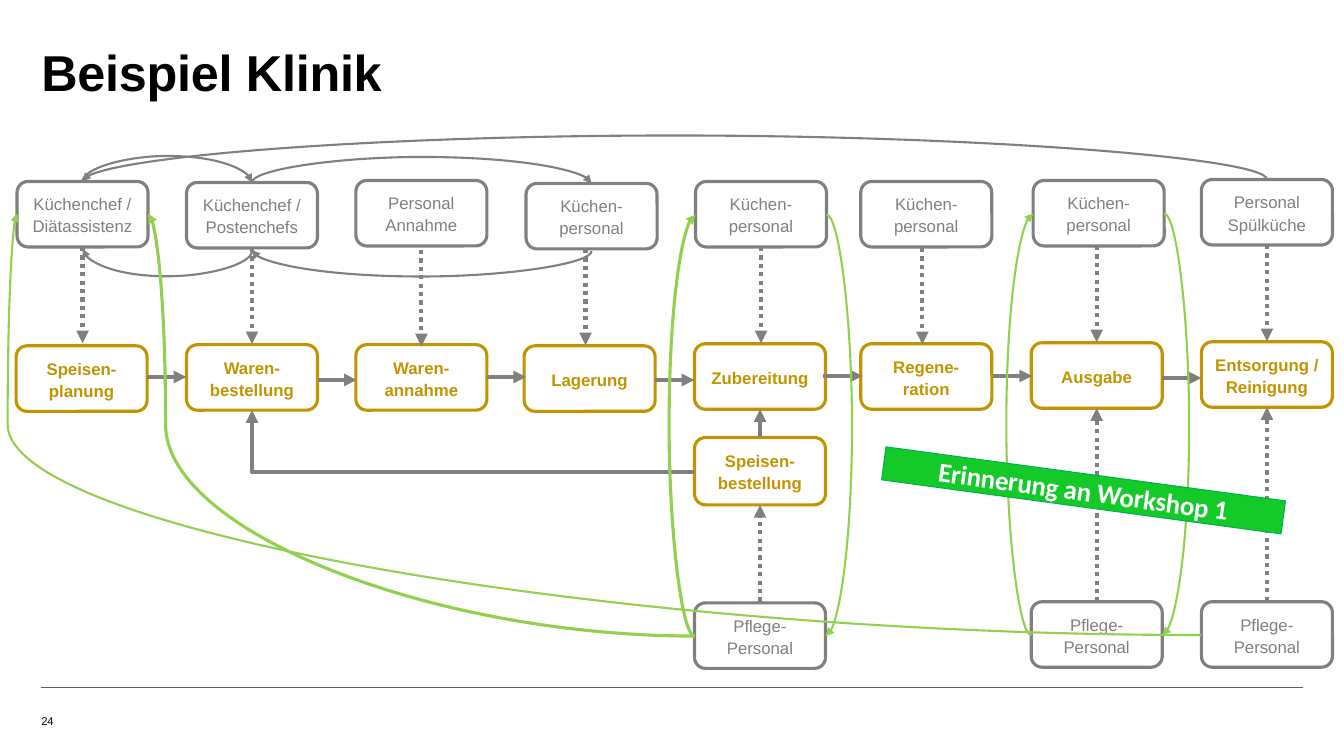
from lxml.etree import SubElement
from pptx import Presentation
from pptx.dml.color import RGBColor
from pptx.enum.dml import MSO_LINE
from pptx.enum.shapes import MSO_CONNECTOR, MSO_SHAPE
from pptx.enum.text import MSO_ANCHOR, MSO_AUTO_SIZE, PP_ALIGN
from pptx.oxml.ns import qn
from pptx.util import Pt

BLACK = RGBColor(0x00, 0x00, 0x00)
WHITE = RGBColor(0xFF, 0xFF, 0xFF)
GRAY = RGBColor(0x80, 0x80, 0x80)
RULE_GRAY = RGBColor(0x5E, 0x5E, 0x5E)
GOLD = RGBColor(0xC2, 0x94, 0x01)
LIME = RGBColor(0x92, 0xD0, 0x50)
BANNER_GREEN = RGBColor(0x13, 0xCA, 0x29)
BANNER_EDGE = RGBColor(0x00, 0xAF, 0x50)


def add_run(paragraph, text, size, color, bold=False, font="Arial", spacing=0):
    run = paragraph.add_run()
    run.text = text
    run.font.name = font
    run.font.size = Pt(size)
    run.font.bold = bold
    run.font.color.rgb = color
    if spacing:
        run._r.get_or_add_rPr().set("spc", str(spacing))


def style_line(connector, color, width, arrow=True, dotted=False):
    connector.line.color.rgb = color
    connector.line.width = Pt(width)
    if dotted:
        connector.line.dash_style = MSO_LINE.ROUND_DOT
    if arrow:
        SubElement(connector.get_or_add_ln(), qn("a:tailEnd"), type="triangle")
    SubElement(connector.element.spPr, qn("a:effectLst"))


presentation = Presentation()
presentation.slide_width = Pt(960)
presentation.slide_height = Pt(540)
slide = presentation.slides.add_slide(presentation.slide_layouts[5])
shapes = slide.shapes

footer_rule = shapes.add_connector(MSO_CONNECTOR.STRAIGHT, Pt(29.5), Pt(491), Pt(931), Pt(491))
style_line(footer_rule, RULE_GRAY, 0.5, arrow=False)

title = shapes.title
title.left, title.top, title.width, title.height = Pt(29.5), Pt(29.5), Pt(694.8), Pt(91.4)
page_number = shapes.add_textbox(Pt(29.5), Pt(496.8), Pt(113), Pt(23))
for shape, anchor in ((title, MSO_ANCHOR.TOP), (page_number, MSO_ANCHOR.BOTTOM)):
    frame = shape.text_frame
    frame.word_wrap = True
    frame.auto_size = MSO_AUTO_SIZE.NONE
    frame.vertical_anchor = anchor
    frame.margin_left = frame.margin_top = frame.margin_right = frame.margin_bottom = 0
    frame.paragraphs[0].alignment = PP_ALIGN.LEFT
title.text_frame.paragraphs[0].space_after = Pt(6)
add_run(title.text_frame.paragraphs[0], "Beispiel Klinik", 36, BLACK, True, spacing=-20)
add_run(page_number.text_frame.paragraphs[0], "24", 8, BLACK)

BOX_WIDTH, BOX_HEIGHT = 93.6, 46.8
process_boxes = [
    ("Speisen-planung", 11.5, 247, BOX_HEIGHT),
    ("Waren-bestellung", 133.2, 246.2, BOX_HEIGHT),
    ("Waren-annahme", 254.2, 246.2, BOX_HEIGHT),
    ("Lagerung", 374.4, 247, BOX_HEIGHT),
    ("Zubereitung", 496.1, 245.5, BOX_HEIGHT),
    ("Regene-ration", 614.9, 245.5, BOX_HEIGHT),
    ("Ausgabe", 736.6, 244.8, BOX_HEIGHT),
    ("Entsorgung / Reinigung", 858.2, 244.1, BOX_HEIGHT),
    ("Speisen-bestellung", 496.1, 312.5, 48.2),
]
staff_boxes = [
    ("Küchenchef /\nDiätassistenz", 12.2, 129.6, BOX_HEIGHT),
    ("Küchenchef / Postenchefs", 133.2, 130.3, BOX_HEIGHT),
    ("Personal Annahme", 254.2, 128.9, BOX_HEIGHT),
    ("Küchen-personal", 375.8, 131, BOX_HEIGHT),
    ("Küchen-personal", 496.8, 129.6, BOX_HEIGHT),
    ("Küchen-personal", 614.9, 129.6, BOX_HEIGHT),
    ("Küchen-personal", 738, 128.9, BOX_HEIGHT),
    ("Personal Spülküche", 858.2, 128.2, BOX_HEIGHT),
    ("Pflege-Personal", 496.1, 430.6, BOX_HEIGHT),
    ("Pflege-Personal", 736.6, 429.8, BOX_HEIGHT),
    ("Pflege-Personal", 858.2, 429.8, BOX_HEIGHT),
]
for boxes, color, bold in ((process_boxes, GOLD, True), (staff_boxes, GRAY, False)):
    for text, left, top, height in boxes:
        box = shapes.add_shape(MSO_SHAPE.ROUNDED_RECTANGLE, Pt(left), Pt(top), Pt(BOX_WIDTH), Pt(height))
        box.shadow.inherit = False
        box.fill.solid()
        box.fill.fore_color.rgb = WHITE
        box.line.color.rgb = color
        box.line.width = Pt(2.25)
        box.text_frame.word_wrap = True
        box.text_frame.vertical_anchor = MSO_ANCHOR.MIDDLE
        paragraph = box.text_frame.paragraphs[0]
        paragraph.alignment = PP_ALIGN.CENTER
        paragraph.line_spacing = 1.1
        for index, line in enumerate(text.split("\n")):
            if index:
                paragraph.add_line_break()
            add_run(paragraph, line, 12, color, bold)

process_arrows = [(105.1, 269.3), (226.8, 271.4), (347.8, 269.3), (468, 271.4),
                  (588.2, 268.6), (709.2, 268.6), (830.2, 270)]
staff_arrows = [(59, 176.4), (180, 177.1), (301, 178.6), (418.3, 177.8),
                (543.6, 176.4), (658.8, 177.1), (783.4, 175.7), (905, 175)]
arrows = [(x, y, x + 28, y, False) for x, y in process_arrows]
arrows += [(x, y, x, y + 68.8, True) for x, y in staff_arrows]
arrows += [
    (542.9, 312.5, 542.9, 292.3, False),
    (542.9, 429.8, 542.9, 360.7, True),
    (783.4, 429.8, 783.4, 291.6, True),
    (905, 429.1, 905, 290.9, True),
]
for start_x, start_y, end_x, end_y, dotted in arrows:
    arrow = shapes.add_connector(MSO_CONNECTOR.STRAIGHT, Pt(start_x), Pt(start_y), Pt(end_x), Pt(end_y))
    style_line(arrow, GRAY, 3, dotted=dotted)

order_arrow = shapes.add_connector(MSO_CONNECTOR.ELBOW, Pt(180), Pt(293), Pt(496.1), Pt(337))
order_arrow.element.spPr.find(qn("a:xfrm")).set("rot", str(180 * 60000))
order_arrow.element.spPr.find(qn("a:prstGeom")).set("prst", "bentConnector2")
style_line(order_arrow, GRAY, 3)

side_curves = [
    (496.1, 454.3, 496.8, 153.4, 478.1, 2.25),
    (590.4, 153.4, 589.7, 454.3, 608.4, 1.5),
    (496.1, 454.3, 105.8, 152.6, 118.1, 2.25),
    (858.2, 453.6, 12.2, 152.6, 5.8, 1.5),
    (736.6, 453.6, 738, 152.6, 718.6, 1.5),
    (831.6, 152.6, 830.2, 453.6, 849.6, 1.5),
]
staff_curves = [
    (59, 129.6, 180, 130.3, 111.6, 1.5),
    (180, 179.3, 59, 177.8, 197.3, 1.5),
    (905, 128.2, 59, 129.6, 96.5, 1.5),
    (422.6, 179.3, 180, 178.6, 197.3, 1.5),
    (180, 130.3, 422.6, 131, 112.3, 1.5),
]
for curves, color, upright in ((staff_curves, GRAY, True), (side_curves, LIME, False)):
    for start_x, start_y, end_x, end_y, bend, line_width in curves:
        step_x, step_y = end_x - start_x, end_y - start_y
        if upright:
            along, across, start = step_y, step_x, start_y
            rotation = 270 if across > 0 else 90
        else:
            along, across, start = step_x, step_y, start_x
            rotation = 0 if across > 0 else 180
        width, height = abs(along), abs(across)
        left = (start_x + end_x - width) / 2
        top = (start_y + end_y - height) / 2
        curve = shapes.add_connector(MSO_CONNECTOR.CURVE, Pt(left), Pt(top), Pt(left + width), Pt(top + height))
        transform = curve.element.spPr.find(qn("a:xfrm"))
        transform.set("rot", str(rotation * 60000))
        if (along > 0) == (rotation >= 180):
            transform.set("flipH", "1")
        adjustments = curve.element.spPr.find(qn("a:prstGeom")).find(qn("a:avLst"))
        bend_ratio = round((bend - start) / along * 100000)
        SubElement(adjustments, qn("a:gd"), name="adj1", fmla=f"val {bend_ratio}")
        style_line(curve, color, line_width)

banner = shapes.add_shape(MSO_SHAPE.RECTANGLE, Pt(630), Pt(338.4), Pt(288), Pt(23.8))
banner.rotation = 7.7
banner.shadow.inherit = False
banner.fill.solid()
banner.fill.fore_color.rgb = BANNER_GREEN
banner.line.color.rgb = BANNER_EDGE
banner.line.width = Pt(0.72)
frame = banner.text_frame
frame.word_wrap = True
frame.vertical_anchor = MSO_ANCHOR.MIDDLE
frame.margin_left = frame.margin_top = frame.margin_right = frame.margin_bottom = 0
frame.paragraphs[0].alignment = PP_ALIGN.CENTER
add_run(frame.paragraphs[0], "Erinnerung an Workshop 1", 19.3, WHITE, True, "Calibri", -20)

presentation.save("out.pptx")
